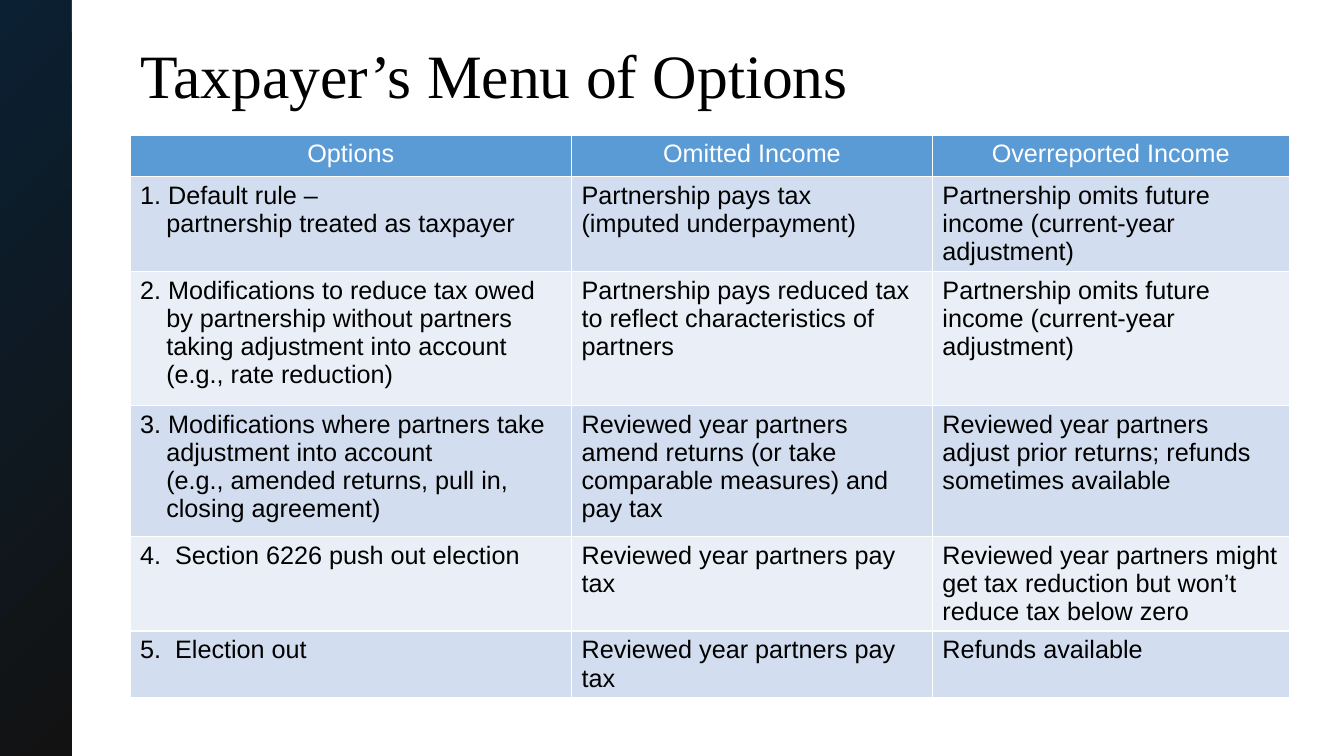
from pptx import Presentation
from pptx.dml.color import RGBColor
from pptx.enum.shapes import MSO_SHAPE
from pptx.enum.text import MSO_ANCHOR, MSO_AUTO_SIZE, PP_ALIGN
from pptx.util import Pt

COLUMN_WIDTHS = [315.36, 257.76, 254.88]
ROW_HEIGHTS = [29.52, 50.4, 95.76, 93.6, 50.4, 29.52]
HANGING_INDENT = 18.72
HANGING_ROWS = (1, 2, 3)
OPTIONS = [
    ["Options", "Omitted Income", "Overreported Income"],
    ["1. Default rule – \vpartnership treated as taxpayer",
     "Partnership pays tax \v(imputed underpayment)",
     "Partnership omits future income (current-year adjustment)"],
    ["2. Modifications to reduce tax owed by partnership without partners "
     "taking adjustment into account\v(e.g., rate reduction)",
     "Partnership pays reduced tax to reflect characteristics of partners",
     "Partnership omits future income (current-year adjustment)"],
    ["3. Modifications where partners take adjustment into account\v"
     "(e.g., amended returns, pull in, closing agreement)",
     "Reviewed year partners amend returns (or take comparable measures) and pay tax",
     "Reviewed year partners adjust prior returns; refunds sometimes available"],
    ["4.  Section 6226 push out election",
     "Reviewed year partners pay tax",
     "Reviewed year partners might get tax reduction but won’t reduce tax below zero"],
    ["5.  Election out", "Reviewed year partners pay tax", "Refunds available"],
]


def rgb(value):
    return RGBColor.from_string(value)


def style_runs(paragraph, font_name, size, color):
    for run in paragraph.runs:
        run.font.name = font_name
        run.font.size = Pt(size)
        run.font.bold = False
        run.font.color.rgb = rgb(color)


def add_sidebar(slide):
    sidebar = slide.shapes.add_shape(MSO_SHAPE.RECTANGLE, 0, 0, Pt(51.12), Pt(540))
    sidebar.shadow.inherit = False
    sidebar.line.fill.background()
    sidebar.fill.gradient()
    sidebar.fill.gradient_angle = 315
    for stop, color in zip(sidebar.fill.gradient_stops, ("0B2032", "121212")):
        stop.color.rgb = rgb(color)


def set_title(slide, text):
    title = slide.shapes.title
    title.left, title.top, title.width, title.height = Pt(92.88), Pt(28.8), Pt(828), Pt(104.4)
    frame = title.text_frame
    frame.text = text
    frame.vertical_anchor = MSO_ANCHOR.TOP
    frame.auto_size = MSO_AUTO_SIZE.NONE
    heading = frame.paragraphs[0]
    heading.alignment = PP_ALIGN.LEFT
    heading.line_spacing = 0.9
    style_runs(heading, "Times New Roman", 44, "000000")


def fill_cell(cell, text, fill, color, alignment, hanging):
    cell.fill.solid()
    cell.fill.fore_color.rgb = rgb(fill)
    cell.text_frame.text = text
    paragraph = cell.text_frame.paragraphs[0]
    paragraph.alignment = alignment
    if hanging:
        properties = paragraph._p.get_or_add_pPr()
        properties.set("marL", str(Pt(HANGING_INDENT)))
        properties.set("indent", str(-Pt(HANGING_INDENT)))
    style_runs(paragraph, "Arial", 18, color)


def add_options_table(slide):
    table = slide.shapes.add_table(
        len(OPTIONS), len(COLUMN_WIDTHS), Pt(92.88), Pt(96.48),
        Pt(sum(COLUMN_WIDTHS)), Pt(sum(ROW_HEIGHTS))).table
    for column, width in zip(table.columns, COLUMN_WIDTHS):
        column.width = Pt(width)
    for row, height in zip(table.rows, ROW_HEIGHTS):
        row.height = Pt(height)
    for r, texts in enumerate(OPTIONS):
        if r == 0:
            fill, color, alignment = "5B9BD5", "FFFFFF", PP_ALIGN.CENTER
        else:
            fill = "D2DEEF" if r % 2 else "EAEFF7"
            color, alignment = "000000", PP_ALIGN.LEFT
        for c, text in enumerate(texts):
            hanging = c == 0 and r in HANGING_ROWS
            fill_cell(table.cell(r, c), text, fill, color, alignment, hanging)


def main():
    presentation = Presentation()
    presentation.slide_width = Pt(960)
    presentation.slide_height = Pt(540)
    slide = presentation.slides.add_slide(presentation.slide_layouts[5])
    add_sidebar(slide)
    set_title(slide, "Taxpayer’s Menu of Options")
    add_options_table(slide)
    presentation.save("out.pptx")


if __name__ == "__main__":
    main()
